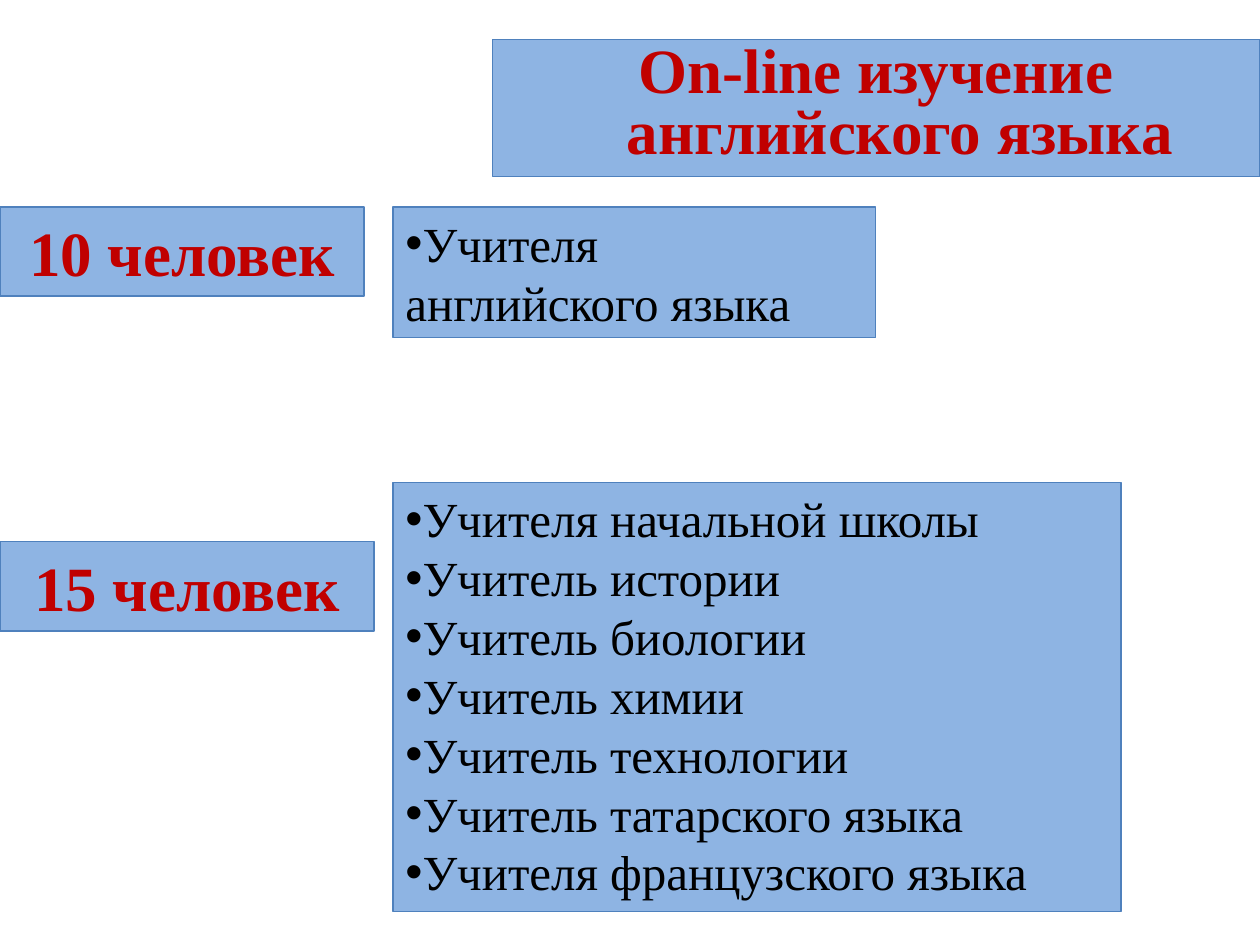
import pptx
import pptx.dml.color
import pptx.enum.text
import pptx.oxml.ns
import pptx.util
from lxml import etree

Cm = pptx.util.Cm
Pt = pptx.util.Pt
RGBColor = pptx.dml.color.RGBColor
ALIGN = pptx.enum.text.PP_ALIGN

PANEL_BLUE = RGBColor(0x8E, 0xB4, 0xE3)
BORDER_BLUE = RGBColor(0x4F, 0x81, 0xBD)
HEADING_RED = RGBColor(0xC0, 0x00, 0x00)
LIST_BLACK = RGBColor(0x00, 0x00, 0x00)

FONT = "Times New Roman"
LIST_LEFT = 7.92
FIRST_ROW_TOP = 4.17
HEADING_HEIGHT = 1.8

TITLE = "On-line изучение английского языка"
TITLE_BOX = (9.93, 0.79, 15.47, 2.77)

GROUPS = [
    {
        "heading": "10 человек",
        "heading_box": (0, FIRST_ROW_TOP, 7.34, HEADING_HEIGHT),
        "teachers": ["Учителя английского языка"],
        "teachers_box": (LIST_LEFT, FIRST_ROW_TOP, 9.73, 2.64),
    },
    {
        "heading": "15 человек",
        "heading_box": (0, 10.92, 7.54, HEADING_HEIGHT),
        "teachers": [
            "Учителя начальной школы",
            "Учитель истории",
            "Учитель биологии",
            "Учитель химии",
            "Учитель технологии",
            "Учитель татарского языка",
            "Учителя французского языка",
        ],
        "teachers_box": (LIST_LEFT, 9.73, 14.68, 8.64),
    },
]


def fill_panel(panel, lines, box, size=36, color=HEADING_RED, bold=True,
               align=ALIGN.CENTER, bullet=None, margin=0, indent=0,
               line_spacing=1.0, space_before=0):
    panel.left, panel.top, panel.width, panel.height = map(Cm, box)
    panel.fill.solid()
    panel.fill.fore_color.rgb = PANEL_BLUE
    panel.line.color.rgb = BORDER_BLUE
    panel.line.width = Pt(0.75)
    frame = panel.text_frame
    frame.text = "\n".join(lines)
    frame.word_wrap = True
    frame.auto_size = pptx.enum.text.MSO_AUTO_SIZE.NONE
    frame.vertical_anchor = pptx.enum.text.MSO_ANCHOR.TOP
    for paragraph in frame.paragraphs:
        paragraph.alignment = align
        paragraph.line_spacing = line_spacing
        paragraph.space_before = Pt(space_before)
        font = paragraph.runs[0].font
        font.name = FONT
        font.size = Pt(size)
        font.bold = bold
        font.color.rgb = color
        properties = paragraph._p.get_or_add_pPr()
        properties.set("marL", str(Cm(margin)))
        properties.set("indent", str(Cm(indent)))
        if bullet:
            typeface = etree.SubElement(properties, pptx.oxml.ns.qn("a:buFont"))
            typeface.set("typeface", "Arial")
            mark = etree.SubElement(properties, pptx.oxml.ns.qn("a:buChar"))
            mark.set("char", bullet)
        else:
            etree.SubElement(properties, pptx.oxml.ns.qn("a:buNone"))


def main():
    deck = pptx.Presentation()
    deck.slide_width, deck.slide_height = Cm(25.4), Cm(19.05)
    slide = deck.slides.add_slide(deck.slide_layouts.get_by_name("Comparison"))
    title, *bodies = slide.placeholders

    fill_panel(title, [TITLE], TITLE_BOX, margin=0.95, indent=-0.95,
               line_spacing=0.8, space_before=7.2)
    for group, heading, teachers in zip(GROUPS, bodies[::2], bodies[1::2]):
        fill_panel(heading, [group["heading"]], group["heading_box"])
        fill_panel(teachers, group["teachers"], group["teachers_box"], size=28,
                   color=LIST_BLACK, bold=False, align=ALIGN.LEFT, bullet="•")

    deck.save("out.pptx")


if __name__ == "__main__":
    main()
